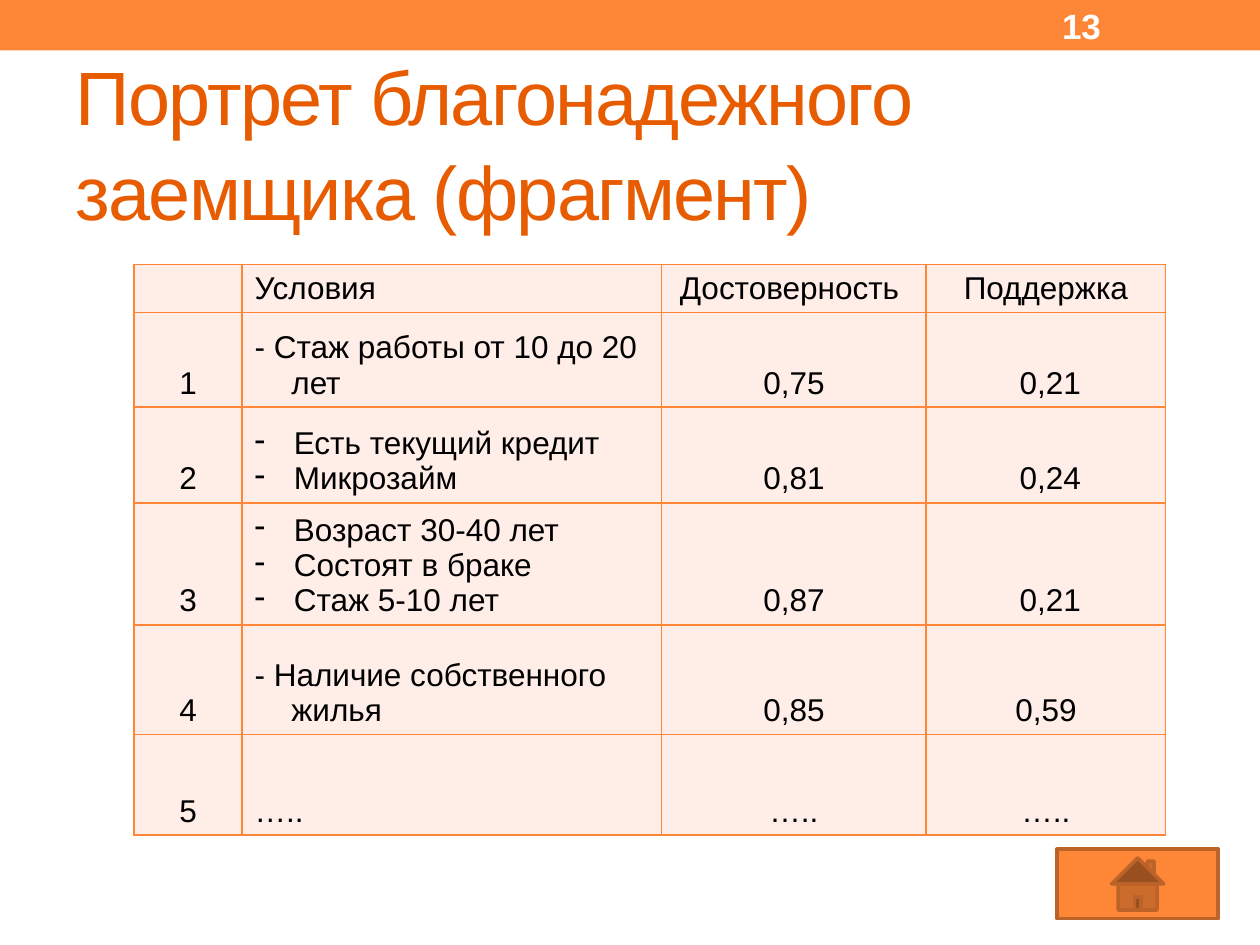
from dataclasses import dataclass

from lxml.etree import SubElement
from pptx import Presentation
from pptx.dml.color import RGBColor
from pptx.enum.shapes import MSO_SHAPE
from pptx.enum.text import MSO_ANCHOR, MSO_AUTO_SIZE, PP_ALIGN
from pptx.oxml.ns import qn
from pptx.util import Cm, Pt


@dataclass(frozen=True)
class Theme:
    font: str = "Arial"
    accent: RGBColor = RGBColor.from_string("FE8637")
    accent_dark: RGBColor = RGBColor.from_string("BC6329")
    heading: RGBColor = RGBColor.from_string("E75C01")
    cell: RGBColor = RGBColor.from_string("FFEDE8")
    ink: RGBColor = RGBColor.from_string("000000")
    white: RGBColor = RGBColor.from_string("FFFFFF")
    title_size: float = 43.2
    number_size: float = 20
    table_size: float = 18
    hanging: float = 0.74
    bullet_hanging: float = 0.79


class SlideBuilder:
    def __init__(self, slide, theme):
        self.slide = slide
        self.theme = theme

    def style(self, paragraph, size, color, bold=False):
        font = paragraph.font
        font.name, font.size, font.bold = self.theme.font, Pt(size), bold
        font.color.rgb = color

    def shape(self, preset, box, line=None):
        shape = self.slide.shapes.add_shape(preset, *map(Cm, box))
        shape.shadow.inherit = False
        shape.fill.solid()
        shape.fill.fore_color.rgb = self.theme.accent
        if line is None:
            shape.line.fill.background()
        else:
            shape.line.color.rgb = line
            shape.line.width = Pt(2.08)

    def title(self, text, box):
        title = self.slide.shapes.title
        title.left, title.top, title.width, title.height = map(Cm, box)
        frame = title.text_frame
        frame.text = text
        frame.auto_size = MSO_AUTO_SIZE.NONE
        frame.vertical_anchor = MSO_ANCHOR.MIDDLE
        heading = frame.paragraphs[0]
        heading.alignment = PP_ALIGN.LEFT
        heading.line_spacing = 1.05
        self.style(heading, self.theme.title_size, self.theme.heading)
        heading.runs[0].font._element.set("spc", "-100")

    def page_number(self, text, box):
        frame = self.slide.shapes.add_textbox(*map(Cm, box)).text_frame
        frame.word_wrap = True
        frame.vertical_anchor = MSO_ANCHOR.MIDDLE
        frame.text = text
        self.style(frame.paragraphs[0], self.theme.number_size, self.theme.white, True)

    def table(self, rows, origin, widths, heights):
        table = self.slide.shapes.add_table(
            len(rows), len(widths), *map(Cm, (*origin, sum(widths), sum(heights)))
        ).table
        table.first_row = table.horz_banding = False
        for column, width in zip(table.columns, widths):
            column.width = Cm(width)
        for row, height, contents in zip(table.rows, heights, rows):
            row.height = Cm(height)
            for index, (cell, content) in enumerate(zip(row.cells, contents)):
                align = PP_ALIGN.LEFT if index == 1 else PP_ALIGN.CENTER
                self.cell(cell, content, align)

    def cell(self, cell, content, align):
        """Fill one cell; a list becomes bulleted paragraphs."""
        bulleted = isinstance(content, list)
        hanging = self.theme.bullet_hanging if bulleted else self.theme.hanging
        cell.text = "\n".join(content) if bulleted else content
        cell.vertical_anchor = MSO_ANCHOR.BOTTOM
        for paragraph in cell.text_frame.paragraphs:
            paragraph.alignment = align
            self.style(paragraph, self.theme.table_size, self.theme.ink)
            properties = paragraph._p.get_or_add_pPr()
            properties.set("marL", str(Cm(hanging)))
            properties.set("indent", str(-Cm(hanging)))
            if bulleted:
                bullet = properties.makeelement(qn("a:buChar"), {"char": "-"})
                properties.insert(0, bullet)
        self.borders(cell)
        cell.fill.solid()
        cell.fill.fore_color.rgb = self.theme.cell

    def borders(self, cell):
        properties = cell._tc.get_or_add_tcPr()
        for side in ("a:lnL", "a:lnR", "a:lnT", "a:lnB"):
            line = SubElement(properties, qn(side), w=str(Pt(1)))
            fill = SubElement(line, qn("a:solidFill"))
            SubElement(fill, qn("a:srgbClr"), val=str(self.theme.accent))


RULES = [
    ("", "Условия", "Достоверность ", "Поддержка"),
    ("1", "- Стаж работы от 10 до 20 лет", "0,75", " 0,21"),
    ("2", ["Есть текущий кредит", "Микрозайм"], "0,81", " 0,24"),
    ("3", ["Возраст 30-40 лет", "Состоят в браке", "Стаж 5-10 лет"], "0,87", " 0,21"),
    ("4", "- Наличие собственного жилья", "0,85", "0,59"),
    ("5", "…..", "…..", "….."),
]


def main():
    presentation = Presentation()
    presentation.slide_width, presentation.slide_height = Cm(25.4), Cm(19.05)
    theme = Theme()
    slide = presentation.slides.add_slide(presentation.slide_layouts[5])
    builder = SlideBuilder(slide, theme)

    builder.shape(MSO_SHAPE.RECTANGLE, (0, 0, 25.4, 1.02))
    builder.title("Портрет благонадежного заемщика (фрагмент)", (1.27, 1.47, 22.86, 2.74))
    builder.table(
        RULES,
        origin=(2.7, 5.33),
        widths=(2.18, 8.46, 5.33, 4.83),
        heights=(0.89, 1.91, 1.93, 2.46, 2.21, 2.03),
    )
    builder.shape(
        MSO_SHAPE.ACTION_BUTTON_HOME, (21.31, 17.12, 3.25, 1.4), theme.accent_dark
    )
    builder.page_number("13", (21.16, 0.05, 2.97, 0.91))
    presentation.save("out.pptx")


if __name__ == "__main__":
    main()
